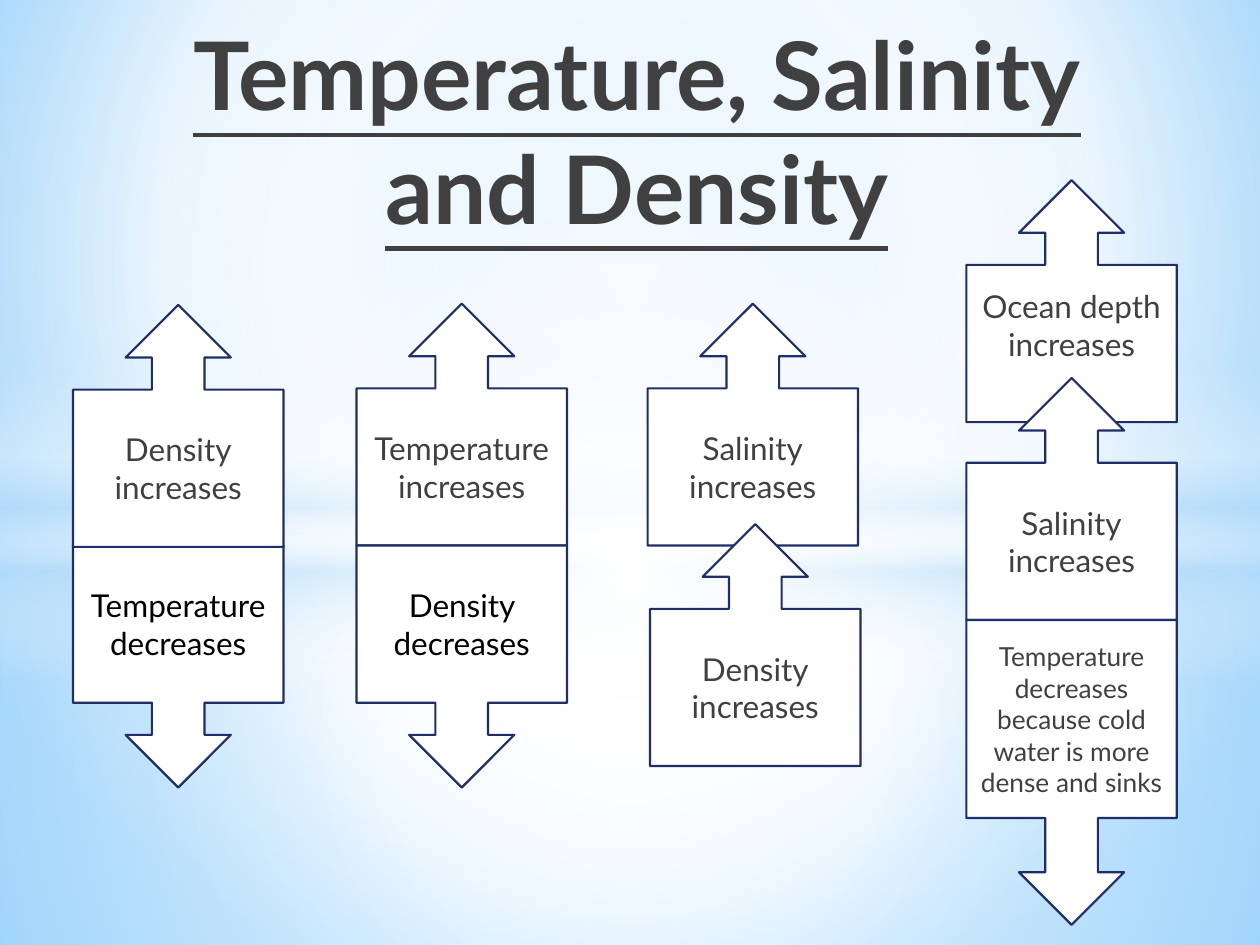
from dataclasses import dataclass
from typing import Optional

from pptx import Presentation
from pptx.dml.color import RGBColor
from pptx.enum import shapes, text
from pptx.oxml import parse_xml
from pptx.oxml.ns import nsdecls, qn
from pptx.util import Inches, Pt

COLORS = {"white": "FFFFFF", "haze": "B4DCFA", "sky": "9ED5FF", "blue": "5BB9FF",
          "line": "1F2E69", "gray": "404040", "black": "000000"}
SHAPE = shapes.MSO_SHAPE
UP, DOWN = SHAPE.UP_ARROW_CALLOUT, SHAPE.DOWN_ARROW_CALLOUT
CENTER = (50, 50, 50, 50)


@dataclass
class Gradient:
    stops: list  # (position %, colour name, opacity %)
    focus: Optional[tuple] = None  # left, top, right, bottom %; None is vertical


@dataclass
class Backdrop:
    kind: int
    top: float
    height: float
    gradient: Gradient


@dataclass
class Callout:
    kind: int
    left: float
    top: float
    paragraphs: list
    color: str = "gray"
    size: int = 18
    height: float = 1.92
    bottom_inset: float = 0.05


BACKGROUND = Gradient([(0, "sky", 100), (60, "white", 100), (100, "blue", 100)],
                      (20, 10, 20, 60))
BACKDROPS = [
    Backdrop(SHAPE.RECTANGLE, 4.23, 3.27, Gradient(
        [(0, "white", 91), (37, "white", 76), (100, "haze", 79)], CENTER)),
    Backdrop(SHAPE.RECTANGLE, 0, 4.23, Gradient(
        [(0, "white", 89), (48, "white", 62), (100, "haze", 79)], CENTER)),
    Backdrop(SHAPE.RECTANGLE, 2.9, 2.5, Gradient(
        [(0, "white", 0), (29, "white", 30), (45, "haze", 40),
         (55, "white", 26), (65, "haze", 60), (100, "white", 0)])),
    Backdrop(SHAPE.OVAL, 1.75, 5.58, Gradient(
        [(0, "white", 100), (54, "white", 0)], CENTER)),
]
CALLOUTS = [
    Callout(DOWN, 0.58, 4.33, ["Temperature decreases"], "black"),
    Callout(UP, 0.58, 2.42, ["Density\nincreases"]),
    Callout(UP, 5.14, 2.41, ["Salinity\nincreases"]),
    Callout(UP, 2.83, 2.41, ["Temperature\nincreases"]),
    Callout(DOWN, 2.83, 4.33, ["Density decreases"], "black"),
    Callout(UP, 5.16, 4.16, ["Density\nincreases"]),
    Callout(UP, 7.67, 1.43, ["Ocean depth\nincreases"], bottom_inset=0.35),
    Callout(UP, 7.67, 3, ["Salinity\nincreases"]),
    Callout(DOWN, 7.67, 4.92, ["Temperature decreases",
                               "because cold water is more dense and sinks"],
            size=15, height=2.42),
]


def rgb(name: str) -> RGBColor:
    return RGBColor.from_string(COLORS[name])


def set_gradient(fill, parent, gradient: Gradient) -> None:
    """Swap the empty fill of parent for a gradient with opacity."""
    stops = "".join(
        f'<a:gs pos="{pos * 1000}"><a:srgbClr val="{COLORS[name]}">'
        f'<a:alpha val="{alpha * 1000}"/></a:srgbClr></a:gs>'
        for pos, name, alpha in gradient.stops)
    if gradient.focus:
        sides = " ".join(f'{side}="{value * 1000}"'
                         for side, value in zip("ltrb", gradient.focus))
        shade = f'<a:path path="circle"><a:fillToRect {sides}/></a:path>'
    else:
        shade = '<a:lin ang="5400000" scaled="0"/>'
    fill.background()
    parent.replace(parent.find(qn("a:noFill")), parse_xml(
        f'<a:gradFill {nsdecls("a")} rotWithShape="1">'
        f'<a:gsLst>{stops}</a:gsLst>{shade}</a:gradFill>'))


def write(p, content: str, color: str, **font_format) -> None:
    p.text = content
    p.alignment = text.PP_ALIGN.CENTER
    for r in p.runs:
        r.font.color.rgb = rgb(color)
        for name, value in {"name": "Lato", **font_format}.items():
            setattr(r.font, name, value)


def add_backdrop(slide, item: Backdrop) -> None:
    sp = slide.shapes.add_shape(item.kind, 0, Inches(item.top),
                                Inches(10), Inches(item.height))
    sp.shadow.inherit = False
    sp.line.fill.background()
    set_gradient(sp.fill, sp._element.spPr, item.gradient)


def add_callout(slide, item: Callout) -> None:
    sp = slide.shapes.add_shape(item.kind, Inches(item.left), Inches(item.top),
                                Inches(1.67), Inches(item.height))
    sp.shadow.inherit = False
    sp.fill.solid()
    sp.fill.fore_color.rgb = rgb("white")
    sp.line.color.rgb = rgb("line")
    sp.line.width = Pt(1.25)
    tf = sp.text_frame
    tf.word_wrap = True
    tf.vertical_anchor = text.MSO_ANCHOR.MIDDLE
    tf.margin_bottom = Inches(item.bottom_inset)
    for i, content in enumerate(item.paragraphs):
        p = tf.add_paragraph() if i else tf.paragraphs[0]
        write(p, content, item.color, size=Pt(item.size))


def place_title(slide) -> None:
    title = slide.shapes.title
    box = {"left": 0.08, "top": 0.08, "width": 9.75, "height": 1.75}
    for name, value in box.items():
        setattr(title, name, Inches(value))
    tf = title.text_frame
    tf.word_wrap = True
    tf.auto_size = text.MSO_AUTO_SIZE.NONE
    tf.vertical_anchor = text.MSO_ANCHOR.TOP
    p = tf.paragraphs[0]
    write(p, "Temperature, Salinity\nand Density", "gray",
          size=Pt(54), bold=True, underline=True)
    p._p.get_or_add_pPr().set("marL", str(Inches(0.2)))
    # Bring the title in front of the backdrops
    slide.shapes._spTree.append(title._element)


def main() -> None:
    prs = Presentation()
    prs.slide_width, prs.slide_height = Inches(10), Inches(7.5)
    slide = prs.slides.add_slide(prs.slide_layouts[5])

    # Background and soft light
    fill = slide.background.fill
    fill.background()
    set_gradient(fill, slide._element.find(".//" + qn("p:bgPr")), BACKGROUND)
    for item in BACKDROPS:
        add_backdrop(slide, item)

    # Title, then the arrow callouts
    place_title(slide)
    for item in CALLOUTS:
        add_callout(slide, item)
    prs.save("out.pptx")


if __name__ == "__main__":
    main()
